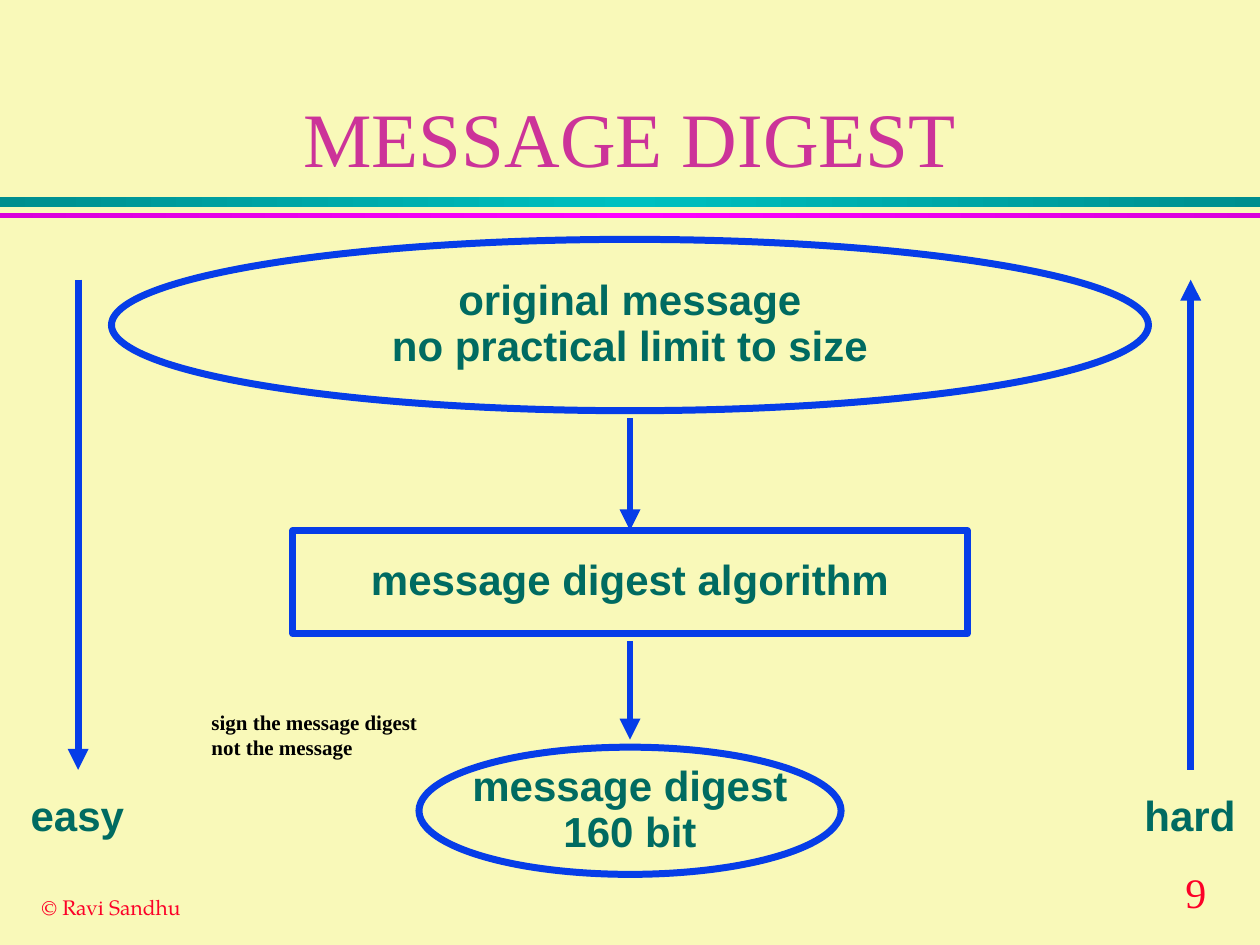
from copy import deepcopy
from dataclasses import dataclass

from pptx import Presentation
from pptx.dml.color import RGBColor
from pptx.enum.shapes import MSO_CONNECTOR, MSO_SHAPE
from pptx.enum.text import MSO_ANCHOR, MSO_AUTO_SIZE, PP_ALIGN
from pptx.oxml.ns import qn
from pptx.util import Inches, Pt
from lxml import etree

RECT, OVAL = MSO_SHAPE.RECTANGLE, MSO_SHAPE.OVAL
LINE = MSO_CONNECTOR.STRAIGHT
LEFT, CENTER = PP_ALIGN.LEFT, PP_ALIGN.CENTER
TOP, MIDDLE, BOTTOM = MSO_ANCHOR.TOP, MSO_ANCHOR.MIDDLE, MSO_ANCHOR.BOTTOM
GROW = MSO_AUTO_SIZE.SHAPE_TO_FIT_TEXT

# Grid of square cells: 100 columns by 75 rows
COLS, ROWS, CELL = 100, 75, 0.1
MID = COLS / 2


@dataclass(frozen=True)
class Theme:
    paper: str = "F9F9B9"
    title: str = "CC3399"
    label: str = "006B61"
    edge: str = "063DE8"
    foot: str = "FC0128"
    note: str = "000000"
    teal: tuple = ("008E8E", "00C0C0", "008E8E")
    pink: tuple = ("DA00DA", "FF00FF", "DA00DA")
    serif: str = "Times New Roman"
    sans: str = "Arial"
    book: str = "TeX Gyre Pagella"
    huge: int = 44
    large: int = 24
    small: int = 12
    stroke: int = 4


THEME = Theme()


def grid(*cells):
    return [Inches(cell * CELL) for cell in cells]


def rgb(code):
    return RGBColor.from_string(code)


def write(shape, text, font=THEME.sans, size=THEME.large, color=THEME.label,
          bold=False, align=LEFT, anchor=TOP, wrap=False, space=None, indent=0):
    frame = shape.text_frame
    frame.word_wrap = wrap
    frame.vertical_anchor = anchor
    frame.text = text
    for para in frame.paragraphs:
        para.alignment = align
        para.line_spacing = space
        if indent:
            para.level = 1
            props = para._p.get_or_add_pPr()
            props.set("marL", str(grid(indent)[0]))
            props.set("indent", "0")
        style = para.runs[0].font
        style.name, style.size, style.bold = font, Pt(size), bold
        style.color.rgb = rgb(color)


def add_text(slide, box, text, grow=True, **form):
    shape = slide.shapes.add_textbox(*grid(*box))
    write(shape, text, **form)
    if grow:
        shape.text_frame.auto_size = GROW


def add_node(slide, kind, width, top, height, text):
    """Outlined shape, centred on the slide, with a bold label."""
    shape = slide.shapes.add_shape(kind, *grid(MID - width / 2, top, width, height))
    shape.shadow.inherit = False
    shape.fill.background()
    shape.line.color.rgb = rgb(THEME.edge)
    shape.line.width = Pt(THEME.stroke)
    write(shape, text, bold=True, align=CENTER, anchor=MIDDLE, space=0.9)
    return shape


def add_band(slide, top, height, colors):
    band = slide.shapes.add_shape(RECT, *grid(0, top, COLS, height))
    band.shadow.inherit = False
    band.line.fill.background()
    fill = band.fill
    fill.gradient()
    fill.gradient_angle = 0
    first = fill._fill._gradFill.find(qn("a:gsLst"))[0]
    first.addnext(deepcopy(first))
    for stop, color, place in zip(fill.gradient_stops, colors, (0, 0.5, 1)):
        stop.color.rgb = rgb(color)
        stop.position = place


def add_arrow(slide, col, start, end, tip="tailEnd"):
    """Upright line with its arrowhead at the end, or at the start for headEnd."""
    arrow = slide.shapes.add_connector(LINE, *grid(col, start, col, end))
    arrow.line.color.rgb = rgb(THEME.edge)
    arrow.line.width = Pt(THEME.stroke)
    etree.SubElement(arrow.line._get_or_add_ln(), qn(f"a:{tip}"), type="triangle")
    etree.SubElement(arrow._element.spPr, qn("a:effectLst"))
    return arrow


def main():
    deck = Presentation()
    deck.slide_width, deck.slide_height = grid(COLS, ROWS)
    slide = deck.slides.add_slide(deck.slide_layouts[6])
    back = slide.background.fill
    back.solid()
    back.fore_color.rgb = rgb(THEME.paper)

    # Bands, footer and title
    add_band(slide, 15.6, 0.8, THEME.teal)
    add_band(slide, 16.9, 0.4, THEME.pink)
    add_text(slide, (93.1, 68.3, 5.9, 5), "9", font=THEME.serif, color=THEME.foot)
    add_text(slide, (2.3, 70.5, 13.1, 3), "© Ravi Sandhu", font=THEME.book,
             size=THEME.small, color=THEME.foot)
    add_text(slide, (10, 2.5, 80, 12.5), "MESSAGE DIGEST", grow=False,
             font=THEME.serif, size=THEME.huge, color=THEME.title,
             align=CENTER, anchor=BOTTOM, wrap=True)

    # Flow from message to digest
    method = add_node(slide, RECT, 53.5, 42.1, 8.2, "message digest algorithm")
    add_node(slide, OVAL, 82.3, 19, 13.6,
             "original message\nno practical limit to size")
    add_node(slide, OVAL, 33.5, 59.3, 10.1, "message digest\n160 bit")
    add_arrow(slide, MID, 33.2, 41.8).end_connect(method, 0)
    add_arrow(slide, MID, 50.9, 58.7)

    # Easy way down, hard way up
    for col, width, word, tip in ((6.2, 9.5, "easy", "tailEnd"),
                                  (94.5, 9.3, "hard", "headEnd")):
        add_arrow(slide, col, 22.2, 61.1, tip)
        add_text(slide, (col - width / 2, 62.2, width, 5.1), word, bold=True)

    # Side note
    add_text(slide, (10.8, 55.8, 24.2, 5),
             "sign the message digest\nnot the message", font=THEME.serif,
             size=THEME.small, color=THEME.note, bold=True, wrap=True, indent=5)

    deck.save("out.pptx")


if __name__ == "__main__":
    main()
